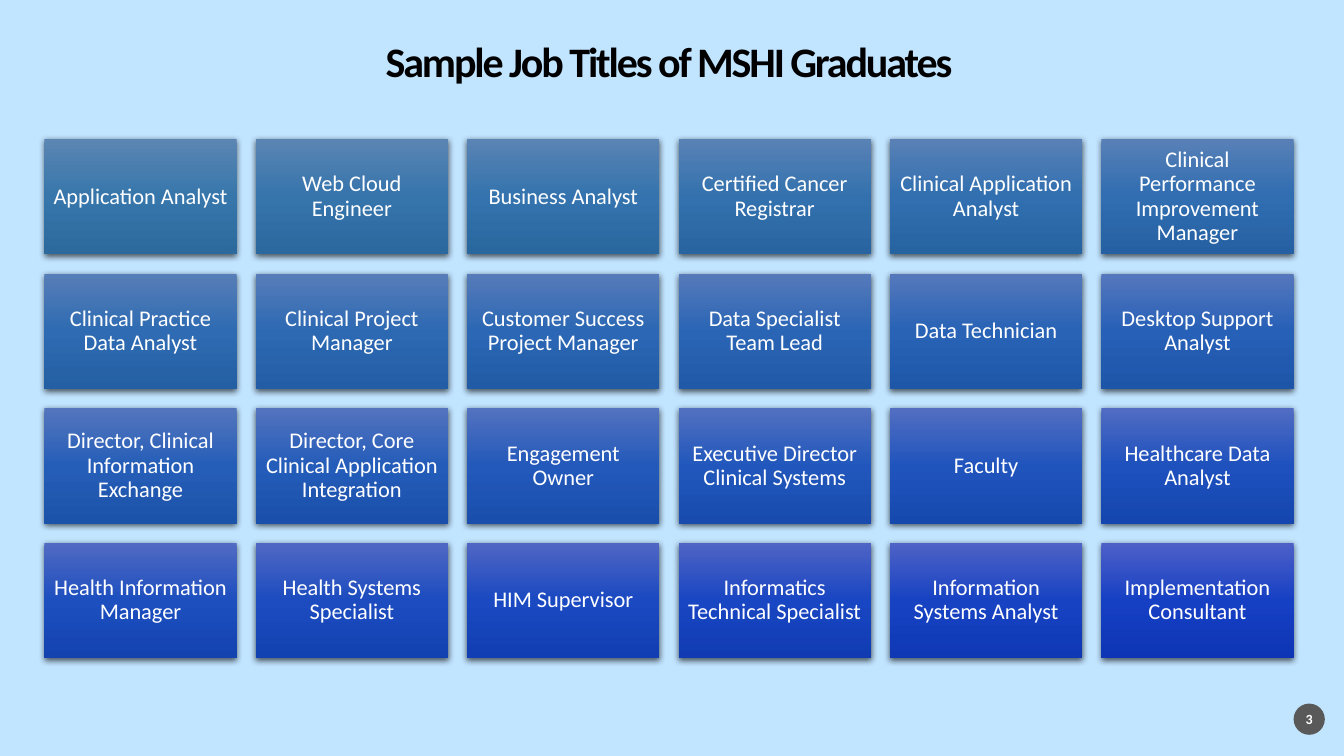
from colorsys import hls_to_rgb, rgb_to_hls
from copy import deepcopy

from lxml import etree
from pptx import Presentation
from pptx.dml.color import RGBColor
from pptx.enum.shapes import MSO_SHAPE
from pptx.enum.text import MSO_ANCHOR, PP_ALIGN
from pptx.oxml.ns import qn
from pptx.util import Inches, Pt

RECT, OVAL = MSO_SHAPE.RECTANGLE, MSO_SHAPE.OVAL
MIDDLE, CENTER = MSO_ANCHOR.MIDDLE, PP_ALIGN.CENTER

COLORS = {"background": "C1E4FF", "title": "000000", "text": "FFFFFF",
          "badge": "595959", "shadow": "000000"}
FIRST_TILE = ["5B86B2", "3776AB", "2C6A9D"]
LAST_TILE = ["4E60C7", "1640C4", "0D35B5"]

JOBS = [
    ["Application Analyst", "Web Cloud Engineer", "Business Analyst",
     "Certified Cancer Registrar", "Clinical Application Analyst",
     "Clinical Performance Improvement Manager"],
    ["Clinical Practice Data Analyst", "Clinical Project Manager",
     "Customer Success Project Manager", "Data Specialist Team Lead",
     "Data Technician", "Desktop Support Analyst"],
    ["Director, Clinical Information Exchange",
     "Director, Core Clinical Application Integration", "Engagement Owner",
     "Executive Director Clinical Systems", "Faculty", "Healthcare Data Analyst"],
    ["Health Information Manager", "Health Systems Specialist", "HIM Supervisor",
     "Informatics Technical Specialist", "Information Systems Analyst",
     "Implementation Consultant"],
]
ROWS, COLS = len(JOBS), len(JOBS[0])
LEFT, TOP, WIDTH, HEIGHT, GAP = 0.44, 1.38, 12.39, 5.15, 0.19


def blend(start, end, share):
    """Return the hex colour at a share of the way between two, by hue."""
    a, b = (rgb_to_hls(*(v / 255 for v in bytes.fromhex(c))) for c in (start, end))
    rgb = hls_to_rgb(*(x + (y - x) * share for x, y in zip(a, b)))
    return "".join(f"{round(v * 255):02X}" for v in rgb)


def write(shape, text, size, color="text", bold=False, spacing=1.0, inset=0.0,
          tracking=None):
    """Put one centred paragraph of formatted text in a shape."""
    tf = shape.text_frame
    tf.word_wrap = True
    tf.vertical_anchor = MIDDLE
    tf.margin_left = tf.margin_right = Inches(inset)
    tf.margin_top = tf.margin_bottom = Inches(inset)
    p = tf.paragraphs[0]
    p.alignment = CENTER
    p.line_spacing = spacing
    r = p.add_run()
    r.text = text
    r.font.name, r.font.size, r.font.bold = "Calibri", Pt(size), bold
    r.font.color.rgb = RGBColor.from_string(COLORS[color])
    if tracking:
        r.font._element.set("spc", str(round(tracking * 100)))


class Deck:
    """Holds the presentation, its grid style and the current slide."""

    def __init__(self):
        """Open a widescreen deck with one coloured blank slide."""
        self.prs = Presentation()
        self.prs.slide_width, self.prs.slide_height = Inches(13.33), Inches(7.5)
        self.s = self.prs.slides.add_slide(self.prs.slide_layouts[6])
        fill = self.s.background.fill
        fill.solid()
        fill.fore_color.rgb = RGBColor.from_string(COLORS["background"])
        self.col_step = (WIDTH + GAP) / COLS
        self.row_step = (HEIGHT + GAP) / ROWS

    def title(self, text):
        """Add the heading across the full grid width."""
        box = map(Inches, (LEFT, 0.4, WIDTH, 0.47))
        write(self.s.shapes.add_textbox(*box), text, 30, "title", bold=True,
              spacing=0.9, tracking=-1.5)

    def shape(self, kind, x, y, w, h):
        """Add a preset shape without line or shadow."""
        sp = self.s.shapes.add_shape(kind, *map(Inches, (x, y, w, h)))
        sp.line.fill.background()
        sp.shadow.inherit = False
        return sp

    def badge(self, text):
        """Add the round slide number."""
        sp = self.shape(OVAL, LEFT + WIDTH, 6.98, 0.31, 0.31)
        sp.fill.solid()
        sp.fill.fore_color.rgb = RGBColor.from_string(COLORS["badge"])
        write(sp, text, 10, bold=True)

    def tile(self, row, col, text):
        """Add a shaded job tile in a grid cell."""
        sp = self.shape(RECT, LEFT + col * self.col_step, TOP + row * self.row_step,
                        self.col_step - GAP, self.row_step - GAP)
        share = (row * COLS + col) / (ROWS * COLS - 1)
        self.gradient(sp, [blend(a, b, share) for a, b in zip(FIRST_TILE, LAST_TILE)])
        self.drop_shadow(sp)
        write(sp, text, 16, spacing=0.9, inset=0.07)

    def gradient(self, sp, colors):
        """Fill a shape from top to bottom with three evenly spaced colours."""
        sp.fill.gradient()
        sp.fill.gradient_angle = 270
        stops = sp.element.spPr.find(".//" + qn("a:gsLst"))
        stops.insert(1, deepcopy(stops[0]))
        for i, (stop, color) in enumerate(zip(sp.fill.gradient_stops, colors)):
            stop.position = i / 2
            stop.color.rgb = RGBColor.from_string(color)

    def drop_shadow(self, sp):
        """Add a soft shadow just below a shape."""
        effects = sp.element.spPr.find(qn("a:effectLst"))
        shadow = etree.SubElement(effects, qn("a:outerShdw"), blurRad=str(Pt(4.5)),
                                  dist=str(Pt(1.5)), dir="5400000", algn="ctr",
                                  rotWithShape="0")
        color = etree.SubElement(shadow, qn("a:srgbClr"), val=COLORS["shadow"])
        etree.SubElement(color, qn("a:alpha"), val="63000")


def main():
    """Build and save the job titles slide."""
    deck = Deck()
    deck.title("Sample Job Titles of MSHI Graduates")
    deck.badge("3")
    for row, jobs in enumerate(JOBS):
        for col, job in enumerate(jobs):
            deck.tile(row, col, job)
    deck.prs.save("out.pptx")


if __name__ == "__main__":
    main()
